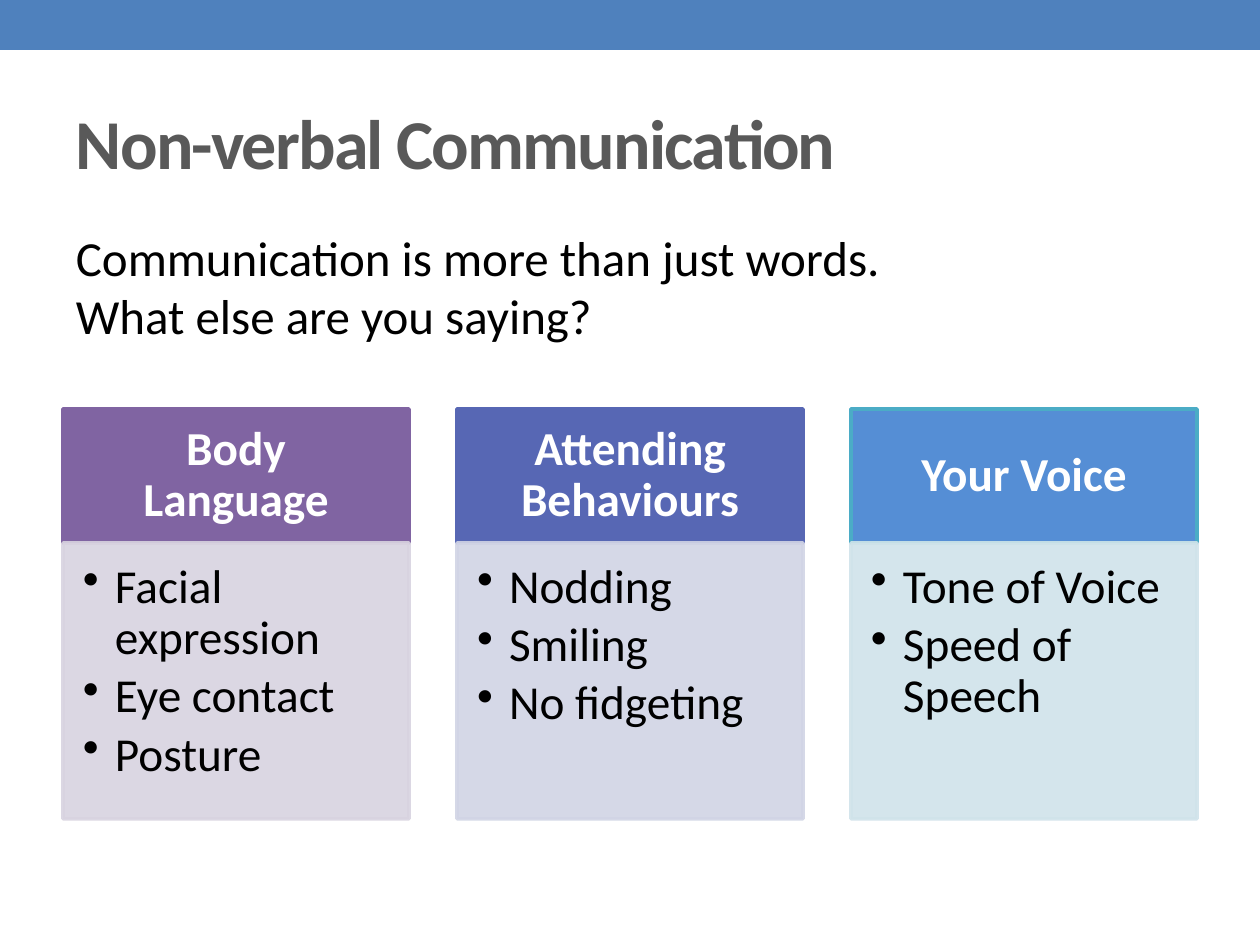
from lxml.etree import SubElement
from pptx import Presentation
from pptx.dml.color import RGBColor
from pptx.enum.shapes import MSO_SHAPE
from pptx.enum.text import MSO_ANCHOR, MSO_AUTO_SIZE, PP_ALIGN
from pptx.oxml.ns import qn
from pptx.util import Emu, Pt

BLUE = RGBColor(0x4F, 0x81, 0xBD)
GREY = RGBColor(0x59, 0x59, 0x59)
BLACK = RGBColor(0x00, 0x00, 0x00)
WHITE = RGBColor(0xFF, 0xFF, 0xFF)
PURPLE = RGBColor(0x80, 0x64, 0xA2)
PALE_PURPLE = RGBColor(0xD8, 0xD3, 0xE0)
INDIGO = RGBColor(0x57, 0x67, 0xB4)
PALE_INDIGO = RGBColor(0xD1, 0xD4, 0xE5)
SKY = RGBColor(0x55, 0x8E, 0xD5)
TEAL = RGBColor(0x4B, 0xAC, 0xC6)
PALE_TEAL = RGBColor(0xD0, 0xE3, 0xEA)

COLUMNS = [
    ("Body Language", PURPLE, PURPLE, PALE_PURPLE,
     ["Facial expression", "Eye contact", "Posture"]),
    ("Attending Behaviours", INDIGO, INDIGO, PALE_INDIGO,
     ["Nodding", "Smiling", "No fidgeting"]),
    ("Your Voice", SKY, TEAL, PALE_TEAL,
     ["Tone of Voice", "Speed of Speech"]),
]
LEFT, STEP, WIDTH = 63, 394, 346
HEAD_TOP, HEAD_HEIGHT, LIST_HEIGHT = 409, 134, 276


def px(length):
    return Emu(round(length * 914400 / 126))


def write(frame, lines, size, color, bold=False, align=PP_ALIGN.LEFT,
          anchor=MSO_ANCHOR.TOP, insets=(13, 6, 13, 6), leading=None,
          after=0, tracking=None, bullet_indent=0):
    frame.word_wrap = True
    frame.auto_size = MSO_AUTO_SIZE.NONE
    frame.vertical_anchor = anchor
    (frame.margin_left, frame.margin_top,
     frame.margin_right, frame.margin_bottom) = map(px, insets)
    for index, line in enumerate(lines):
        para = frame.add_paragraph() if index else frame.paragraphs[0]
        para.text = line
        para.alignment = align
        para.line_spacing = leading
        para.space_after = Pt(after)
        if bullet_indent:
            properties = para._p.get_or_add_pPr()
            properties.set("marL", str(px(bullet_indent)))
            properties.set("indent", str(px(-bullet_indent)))
            SubElement(properties, qn("a:buChar"), char="•")
        for span in para.runs:
            span.font.name = "Calibri"
            span.font.size = Pt(size)
            span.font.bold = bold
            span.font.color.rgb = color
            if tracking is not None:
                span._r.get_or_add_rPr().set("spc", str(tracking * 100))


class SlideBuilder:
    def __init__(self, page):
        self.page = page

    def title(self, text, area):
        box = self.page.shapes.title
        box.left, box.top, box.width, box.height = map(px, area)
        write(box.text_frame, [text], 40, GREY, bold=True,
              anchor=MSO_ANCHOR.MIDDLE, tracking=-1)

    def text(self, text, area):
        box = self.page.shapes.add_textbox(*map(px, area))
        write(box.text_frame, [text], 28, BLACK)

    def panel(self, area, fill, line=None, opacity=100):
        box = self.page.shapes.add_shape(MSO_SHAPE.RECTANGLE, *map(px, area))
        box.shadow.inherit = False
        box.fill.solid()
        box.fill.fore_color.rgb = fill
        if line is None:
            box.line.fill.background()
        else:
            box.line.color.rgb = line
            box.line.width = Pt(2.08)
        if opacity < 100:
            for color in box._element.spPr.iter(qn("a:srgbClr")):
                SubElement(color, qn("a:alpha"), val=str(opacity * 1000))
        return box

    def heading(self, text, area, fill, line):
        box = self.panel(area, fill, line)
        write(box.text_frame, [text], 27, WHITE, bold=True,
              align=PP_ALIGN.CENTER, anchor=MSO_ANCHOR.MIDDLE,
              insets=(26, 15, 26, 15), leading=0.9)

    def bullets(self, items, area, fill):
        box = self.panel(area, fill, fill, opacity=90)
        write(box.text_frame, items, 27, BLACK, insets=(20, 20, 26, 30),
              leading=0.9, after=4, bullet_indent=32)


def main():
    deck = Presentation()
    deck.slide_width, deck.slide_height = px(1260), px(945)
    page = deck.slides.add_slide(deck.slide_layouts[5])
    builder = SlideBuilder(page)
    builder.panel((0, 0, 1260, 50), BLUE)
    builder.title("Non-verbal Communication", (63, 73, 1134, 136))
    builder.text("Communication is more than just words.\vWhat else are you saying?",
                 (63, 221, 1134, 131))
    for index, (name, fill, line, pale, items) in enumerate(COLUMNS):
        left = LEFT + index * STEP
        builder.heading(name, (left, HEAD_TOP, WIDTH, HEAD_HEIGHT), fill, line)
        builder.bullets(items, (left, HEAD_TOP + HEAD_HEIGHT, WIDTH, LIST_HEIGHT), pale)
    deck.save("out.pptx")


if __name__ == "__main__":
    main()
